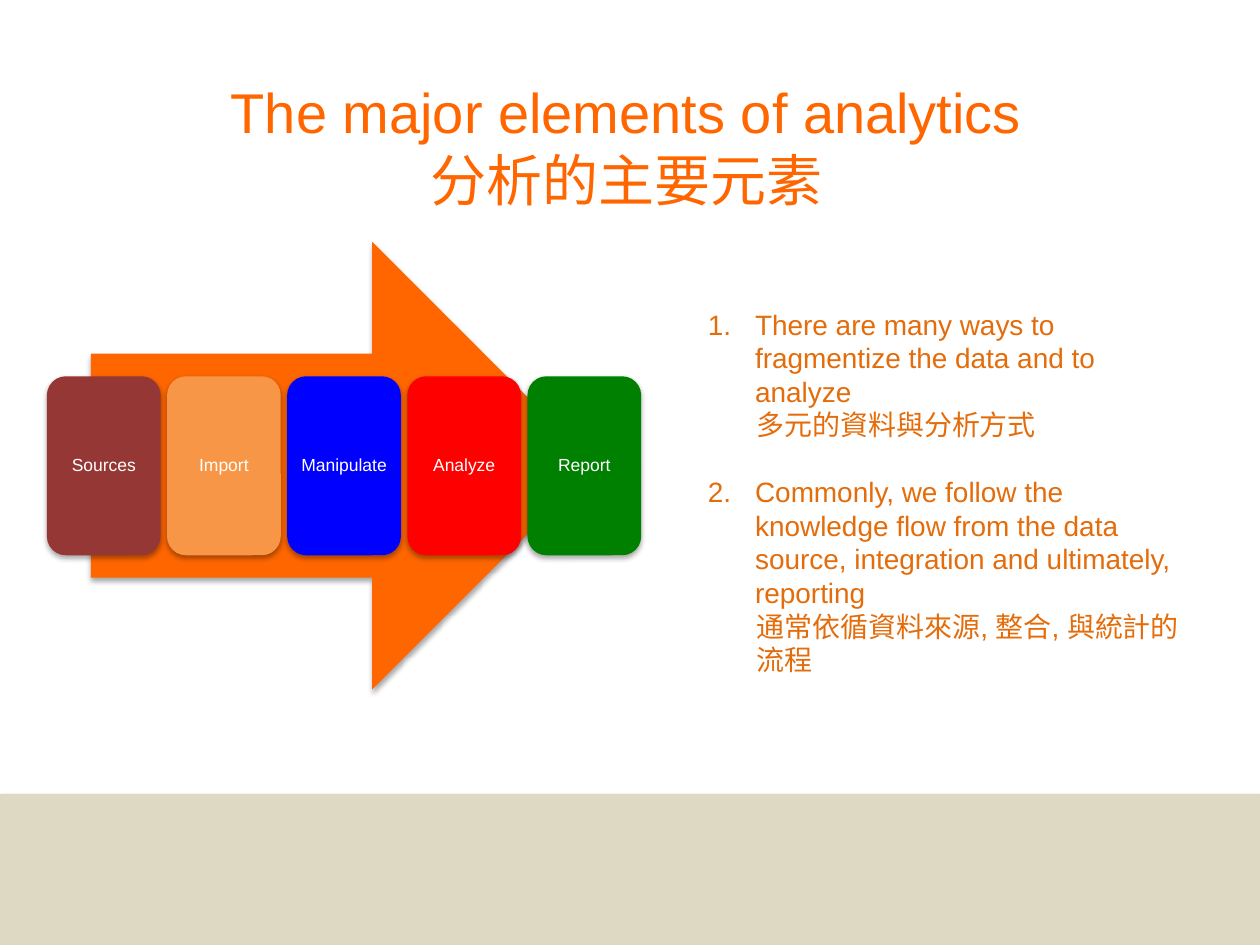
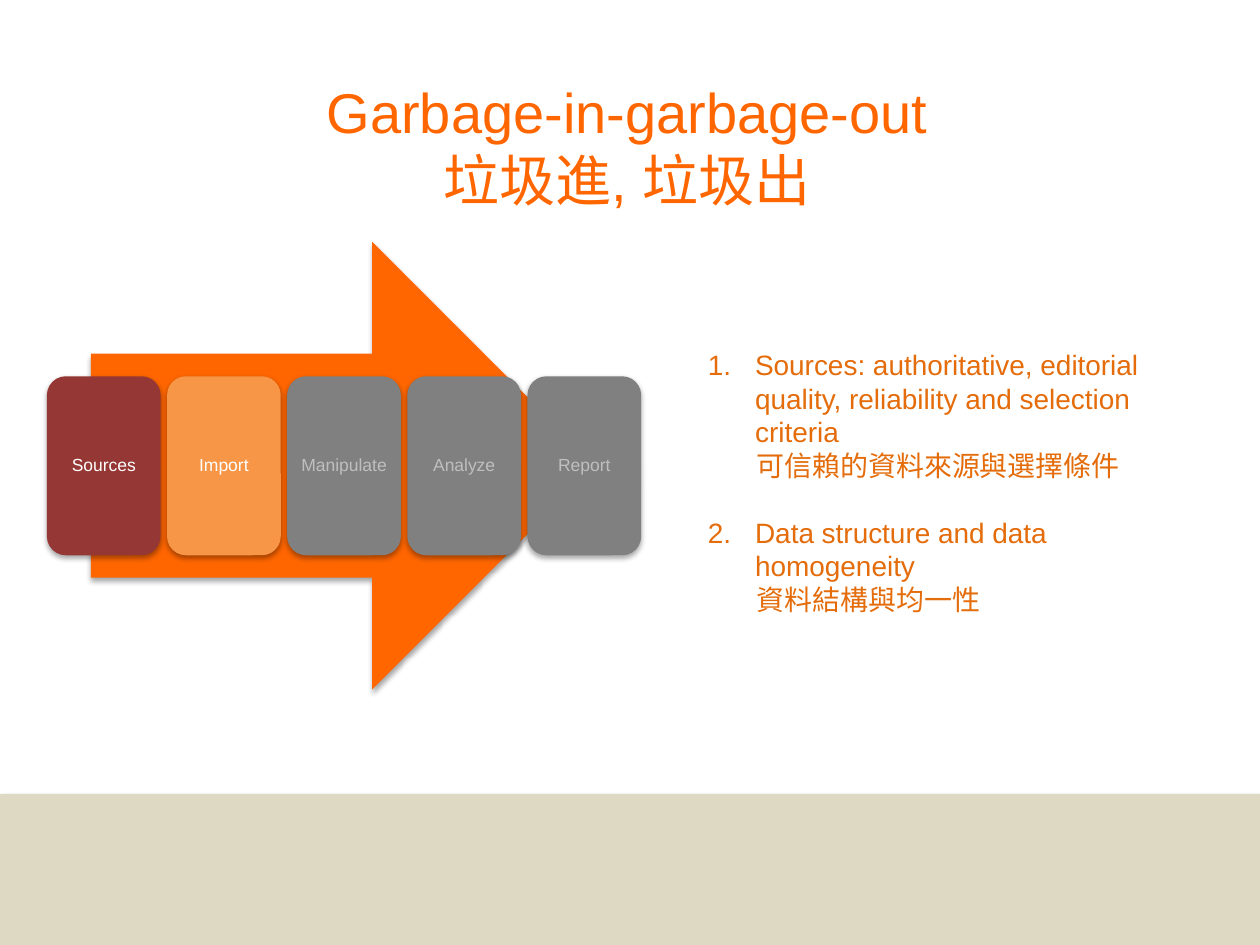
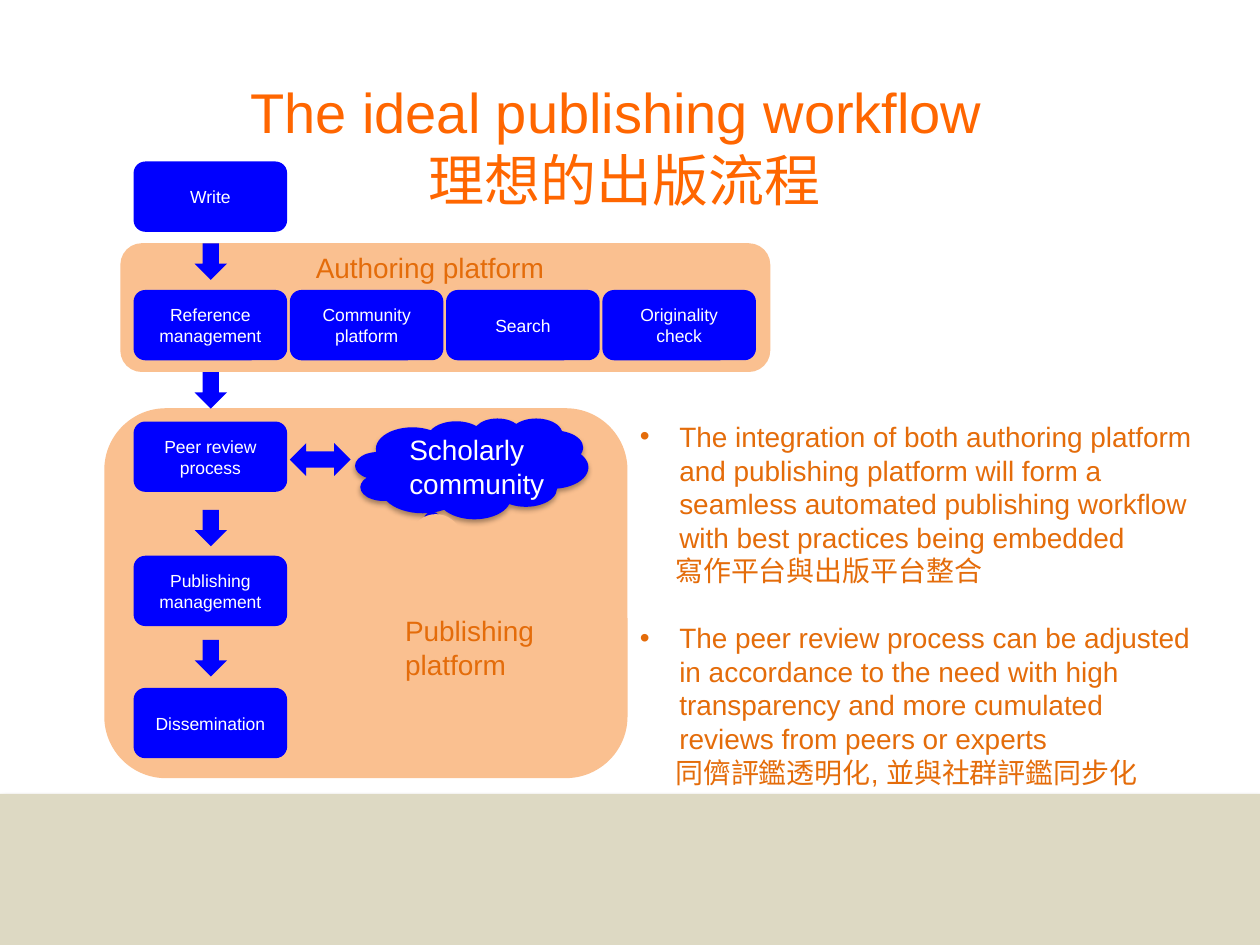
from typing import NamedTuple

from lxml import etree
from pptx import Presentation
from pptx.dml.color import RGBColor
from pptx.enum import shapes, text
from pptx.oxml.ns import qn
from pptx.util import Pt

FONT = "Arial"
WHITE = RGBColor(0xFF, 0xFF, 0xFF)
ORANGE = RGBColor(0xFF, 0x66, 0x00)
TEXT_ORANGE = RGBColor(0xE4, 0x6C, 0x0A)
LIGHT_ORANGE = RGBColor(0xF7, 0x96, 0x46)
PEACH = RGBColor(0xFA, 0xC0, 0x90)
SAND = RGBColor(0xDD, 0xD9, 0xC3)
MAROON = RGBColor(0x95, 0x37, 0x35)
BLUE = RGBColor(0x00, 0x00, 0xFF)
RED = RGBColor(0xFF, 0x00, 0x00)
GREEN = RGBColor(0x00, 0x80, 0x00)
GREY = RGBColor(0x80, 0x80, 0x80)
PALE_GREY = RGBColor(0xBF, 0xBF, 0xBF)

SHAPE = shapes.MSO_SHAPE
CENTER = text.PP_ALIGN.CENTER
LEFT = text.PP_ALIGN.LEFT


class Box(NamedTuple):
    left: float
    top: float
    width: float
    height: float

    def lengths(self):
        return [Pt(value) for value in self]


class Stage(NamedTuple):
    label: str
    fill: RGBColor
    color: RGBColor = WHITE


class Item(NamedTuple):
    english: str
    chinese: str


class ListStyle(NamedTuple):
    margin: float
    hanging: float
    chinese_margin: float
    numbered: bool


NUMBERED = ListStyle(27, 27, 28, True)
BULLETED = ListStyle(58.5, 22.5, 56.2, False)

STAGES = [
    Stage("Sources", MAROON),
    Stage("Import", LIGHT_ORANGE),
    Stage("Manipulate", BLUE),
    Stage("Analyze", RED),
    Stage("Report", GREEN),
]
STAGES_IN_FOCUS = STAGES[:2] + [Stage(s.label, GREY, PALE_GREY) for s in STAGES[2:]]

STEP_LEFT, STEP_WIDTH, STEP_HEIGHT = 76.3, 87.8, 40.2
AUTHORING_TOP = 165.7
TOOL_PITCH = 89.3


def set_font(paragraph, size: float, color: RGBColor):
    paragraph.font.name = FONT
    paragraph.font.size = Pt(size)
    paragraph.font.color.rgb = color


def add_shadow(shape):
    effects = shape._element.spPr.find(qn("a:effectLst"))
    shadow = etree.SubElement(effects, qn("a:outerShdw"), blurRad="40000",
                              dist="23000", dir="5400000", rotWithShape="0")
    color = etree.SubElement(shadow, qn("a:srgbClr"), val="000000")
    etree.SubElement(color, qn("a:alpha"), val="35000")


def add_shape(slide, kind, box: Box, fill: RGBColor, shadow: bool = False):
    shape = slide.shapes.add_shape(kind, *box.lengths())
    shape.fill.solid()
    shape.fill.fore_color.rgb = fill
    shape.line.fill.background()
    shape.shadow.inherit = False
    if shadow:
        add_shadow(shape)
    return shape


def write_label(shape, label: str, color: RGBColor = WHITE):
    frame = shape.text_frame
    frame.word_wrap = True
    frame.vertical_anchor = text.MSO_ANCHOR.MIDDLE
    paragraph = frame.paragraphs[0]
    paragraph.text = label
    paragraph.alignment = CENTER
    set_font(paragraph, 10, color)


def add_text(slide, box: Box, lines: list[str], size: float, color: RGBColor,
             align=LEFT, wrap: bool = True):
    frame = slide.shapes.add_textbox(*box.lengths()).text_frame
    frame.word_wrap = wrap
    for index, line in enumerate(lines):
        paragraph = frame.add_paragraph() if index else frame.paragraphs[0]
        paragraph.text = line
        paragraph.alignment = align
        set_font(paragraph, size, color)


def add_slide(presentation, title: list[str], left: float, width: float):
    """Add a slide with the sand band at the foot and a centred two-line title."""
    slide = presentation.slides.add_slide(presentation.slide_layouts[6])
    add_shape(slide, SHAPE.RECTANGLE, Box(0, 453.6, 720, 86.4), SAND, shadow=True)
    add_text(slide, Box(left, 41, width, 85), title, 32, ORANGE, CENTER, wrap=False)
    return slide


def set_bullet(paragraph, style: ListStyle, number: int):
    properties = paragraph._p.get_or_add_pPr()
    properties.set("marL", str(Pt(style.margin)))
    properties.set("indent", str(-Pt(style.hanging)))
    if style.numbered:
        etree.SubElement(properties, qn("a:buFont"), typeface="+mj-lt")
        etree.SubElement(properties, qn("a:buAutoNum"), type="arabicPeriod",
                         startAt=str(number))
    else:
        etree.SubElement(properties, qn("a:buFont"), typeface=FONT)
        etree.SubElement(properties, qn("a:buChar"), char="•")


def add_list(slide, box: Box, items: list[Item], style: ListStyle):
    frame = slide.shapes.add_textbox(*box.lengths()).text_frame
    frame.word_wrap = True
    for number, item in enumerate(items, 1):
        english = frame.paragraphs[0] if number == 1 else frame.add_paragraph()
        english.text = item.english
        set_bullet(english, style, number)
        if number > 1:
            english.space_before = Pt(19)
        chinese = frame.add_paragraph()
        chinese.text = item.chinese
        chinese._p.get_or_add_pPr().set("marL", str(Pt(style.chinese_margin)))
        for paragraph in (english, chinese):
            set_font(paragraph, 16, TEXT_ORANGE)


def add_stage_arrow(slide, stages: list[Stage]):
    add_shape(slide, SHAPE.RIGHT_ARROW, Box(52, 138.2, 288.6, 255.8), ORANGE, shadow=True)
    for index, stage in enumerate(stages):
        box = Box(26.8 + 68.65 * index, 215, 65, 102.3)
        tile = add_shape(slide, SHAPE.ROUNDED_RECTANGLE, box, stage.fill, shadow=True)
        write_label(tile, stage.label, stage.color)
        frame = tile.text_frame
        frame.margin_left = frame.margin_right = Pt(3)
        frame.margin_top = frame.margin_bottom = Pt(3)
        frame.paragraphs[0].line_spacing = 0.9


def add_step(slide, label: str, left: float, top: float):
    box = Box(left, top, STEP_WIDTH, STEP_HEIGHT)
    write_label(add_shape(slide, SHAPE.ROUNDED_RECTANGLE, box, BLUE), label)


def build_elements(presentation):
    slide = add_slide(presentation, ["The major elements of analytics", "分析的主要元素"],
                      123, 470)
    add_stage_arrow(slide, STAGES)
    add_list(slide, Box(397.4, 172, 286, 220), [
        Item("There are many ways to fragmentize the data and to analyze",
             "多元的資料與分析方式"),
        Item("Commonly, we follow the knowledge flow from the data source, "
             "integration and ultimately, reporting",
             "通常依循資料來源, 整合, 與統計的流程"),
    ], NUMBERED)


def build_garbage(presentation):
    slide = add_slide(presentation, ["Garbage-in-garbage-out", "垃圾進, 垃圾出"], 178, 361)
    add_stage_arrow(slide, STAGES_IN_FOCUS)
    add_list(slide, Box(397.4, 195.1, 286, 201), [
        Item("Sources: authoritative, editorial quality, reliability and selection criteria",
             "可信賴的資料來源與選擇條件"),
        Item("Data structure and data homogeneity", "資料結構與均一性"),
    ], NUMBERED)


def build_workflow(presentation):
    slide = add_slide(presentation, ["The ideal publishing workflow ", "理想的出版流程"],
                      31.7, 650)
    add_shape(slide, SHAPE.ROUNDED_RECTANGLE, Box(59.6, 233.3, 299, 211.4), PEACH)
    add_list(slide, Box(322.6, 236.2, 371.5, 220), [
        Item("The integration of both authoring platform and publishing platform will form "
             "a seamless automated publishing workflow with best practices being embedded",
             "寫作平台與出版平台整合"),
        Item("The peer review process can be adjusted in accordance to the need with high "
             "transparency and more cumulated reviews from peers or experts",
             "同儕評鑑透明化, 並與社群評鑑同步化"),
    ], BULLETED)
    add_shape(slide, SHAPE.ROUNDED_RECTANGLE, Box(68.8, 139, 371.4, 73.6), PEACH)

    steps = {"Write": 92.3, "Peer review process": 240.9,
             "Publishing management": 317.6, "Dissemination": 393.1}
    for label, top in steps.items():
        add_step(slide, label, STEP_LEFT, top)
    tools = ["Reference management", "Community platform", "Search", "Originality check"]
    for index, label in enumerate(tools):
        add_step(slide, label, STEP_LEFT + TOOL_PITCH * index, AUTHORING_TOP)
    for top in (139, 212.6, 291.3, 365.7):
        add_shape(slide, SHAPE.DOWN_ARROW, Box(111.2, top, 18.6, 20.9), BLUE)

    add_text(slide, Box(173.4, 139.5, 147, 26.6), ["Authoring platform"], 16, TEXT_ORANGE,
             wrap=False)
    add_text(slide, Box(224.4, 347.2, 93, 46), ["Publishing platform"], 16, TEXT_ORANGE)
    add_shape(slide, SHAPE.CLOUD_CALLOUT, Box(203, 239, 133.2, 57.6), BLUE, shadow=True)
    add_text(slide, Box(226.8, 243.6, 106.6, 46), ["Scholarly community"], 16, WHITE)
    add_shape(slide, SHAPE.LEFT_RIGHT_ARROW, Box(165.6, 253.2, 34.8, 18.8), BLUE)
    cloud_tail_cover = Box(231.1, 293.8, 36, 45.4)
    add_shape(slide, SHAPE.OVAL, cloud_tail_cover, PEACH)


def main():
    presentation = Presentation()
    presentation.slide_width = Pt(720)
    presentation.slide_height = Pt(540)
    build_elements(presentation)
    build_garbage(presentation)
    build_workflow(presentation)
    presentation.save("out.pptx")


if __name__ == "__main__":
    main()
